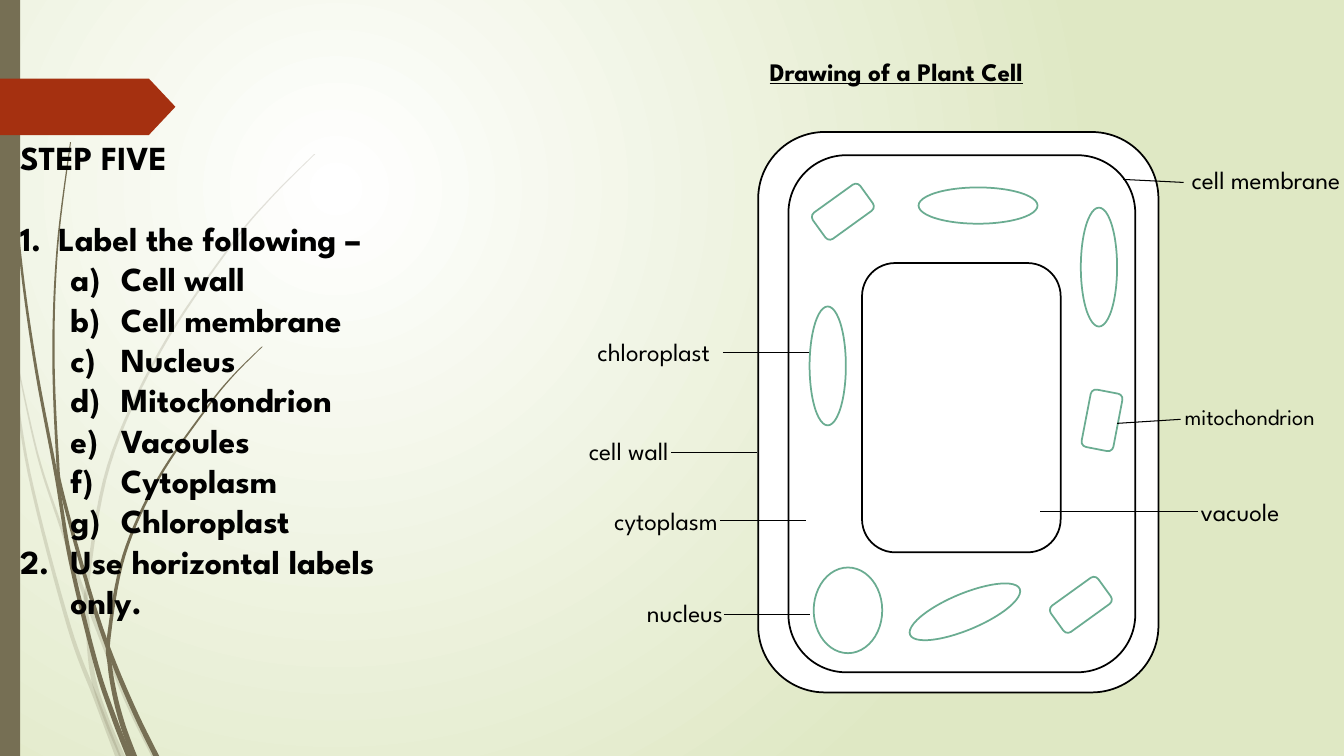
from lxml.etree import SubElement
from pptx import Presentation
from pptx.dml.color import RGBColor
from pptx.enum.shapes import MSO_CONNECTOR, MSO_SHAPE as Shape
from pptx.enum.text import MSO_ANCHOR, MSO_AUTO_SIZE, PP_ALIGN as Align
from pptx.oxml.ns import qn
from pptx.util import Inches, Pt

BOX, OVAL = Shape.FLOWCHART_ALTERNATE_PROCESS, Shape.OVAL
OLIVE, RUST, GREEN, BLACK, WHITE = "766F54", "A53010", "6AAC91", "000000", "FFFFFF"


def rgb(color):
    return RGBColor.from_string(color)


def grid(n):
    """Length of n grid cells: columns and rows are a tenth of an inch."""
    return Inches(n / 10)


def add_text(p, text, size=18, bold=False, underline=False, align=Align.LEFT):
    r = p.add_run()
    r.text = text
    p.alignment = align
    f = r.font
    f.name, f.size, f.bold, f.underline = "League Spartan", Pt(size), bold, underline
    f.color.rgb = rgb(BLACK)


def smooth(knots, steps=8):
    """Points of a Catmull-Rom curve through the knots."""
    ends = [knots[0], *knots, knots[-1]]
    points = []
    for a, b, c, d in zip(ends, ends[1:], ends[2:], ends[3:]):
        for i in range(steps):
            t = i / steps
            points.append(tuple(
                (2 * q + (r - p) * t + (2 * p - 5 * q + 4 * r - s) * t ** 2
                 + (3 * q - p - 3 * r + s) * t ** 3) / 2
                for p, q, r, s in zip(a, b, c, d)))
    return points + [knots[-1]]


class Sheet:
    def __init__(self, s):
        self.s = s

    def background(self, inner, outer):
        fill = self.s.background.fill
        fill.gradient()
        for stop, color in zip(fill.gradient_stops, (inner, outer)):
            stop.color.rgb = rgb(color)
        grad = self.s._element.find(".//" + qn("a:gradFill"))
        grad.remove(grad.find(qn("a:lin")))
        circle = SubElement(grad, qn("a:path"), {"path": "circle"})
        SubElement(circle, qn("a:fillToRect"),
                   {"l": "50000", "t": "50000", "r": "100000", "b": "100000"})

    def paint(self, sp, fill, line=None):
        sp.shadow.inherit = False
        sp.fill.solid()
        sp.fill.fore_color.rgb = rgb(fill)
        if line:
            sp.line.color.rgb = rgb(line)
            sp.line.width = Pt(1.25)
        else:
            sp.line.fill.background()
        return sp

    def shape(self, kind, x, y, w, h, fill=WHITE, line=None, turn=0):
        sp = self.s.shapes.add_shape(kind, grid(x), grid(y), grid(w), grid(h))
        sp.rotation = turn
        return self.paint(sp, fill, line)

    def blade(self, knots, width, opacity=100):
        """Grass blade that widens from its tip to its foot."""
        mid = smooth(knots)
        half = [0.05 + (width / 2 - 0.05) * i / len(mid) for i in range(len(mid))]
        left = [(grid(x - d), grid(y)) for (x, y), d in zip(mid, half)]
        right = [(grid(x + d), grid(y)) for (x, y), d in zip(mid, half)]
        fb = self.s.shapes.build_freeform(*left[0])
        fb.add_line_segments(left[1:] + right[::-1])
        sp = self.paint(fb.convert_to_shape(), OLIVE)
        if opacity < 100:
            color = sp._element.spPr.find(qn("a:solidFill"))[0]
            SubElement(color, qn("a:alpha"), {"val": str(opacity * 1000)})

    def frame(self, x, y, w, h, sp=None):
        sp = sp or self.s.shapes.add_textbox(0, 0, 0, 0)
        sp.left, sp.top, sp.width, sp.height = map(grid, (x, y, w, h))
        tf = sp.text_frame
        tf.word_wrap, tf.auto_size = True, MSO_AUTO_SIZE.NONE
        tf.vertical_anchor = MSO_ANCHOR.TOP
        return tf

    def label(self, text, x, y, w, **style):
        add_text(self.frame(x, y, w, 4).paragraphs[0], text, **style)

    def leader(self, x1, y1, x2, y2, target=None, site=2):
        cx = self.s.shapes.add_connector(MSO_CONNECTOR.STRAIGHT, 0, 0, 0, 0)
        if target is not None:
            cx.end_connect(target, site)
        cx.begin_x, cx.begin_y, cx.end_x, cx.end_y = map(grid, (x1, y1, x2, y2))
        cx.line.color.rgb = rgb(BLACK)
        cx.line.width = Pt(0.75)
        SubElement(cx._element.spPr, qn("a:effectLst"))

    def numbered(self, tf, text, scheme, left, hang, level=0):
        p = tf.add_paragraph()
        p.level = level
        add_text(p, text, size=24, bold=True)
        pPr = p._p.get_or_add_pPr()
        pPr.set("marL", str(grid(left)))
        pPr.set("indent", str(-grid(hang)))
        SubElement(pPr, qn("a:buFont"), {"typeface": "+mj-lt"})
        SubElement(pPr, qn("a:buAutoNum"), {"type": scheme})
        return p


def main():
    prs = Presentation()
    prs.slide_width, prs.slide_height = Inches(13.33), Inches(7.5)
    s = prs.slides.add_slide(prs.slide_layouts[5])
    sheet = Sheet(s)
    sheet.background(WHITE, "DFE8C4")

    # Grass blades, pale ones behind
    pale = [
        [(0, 29), (1, 34.7), (2.9, 47), (6.8, 62), (9.6, 69.5), (11.7, 75)],
        [(1.5, 35), (3.7, 45), (6, 52.1), (8.6, 59.6), (12.5, 69.3), (15.3, 75)],
        [(31.2, 15.3), (26.8, 19.7), (22.8, 24.5), (15.9, 34.8), (10.8, 46.1),
         (8.6, 58.4), (8.7, 62), (9.2, 67), (10.5, 71.2), (12.1, 75)],
    ]
    dark = [
        [(0.35, 0), (0.6, 6.8), (1.8, 23.3), (3.4, 35.5), (5.6, 47.3), (7, 55.6),
         (9.5, 65.8), (11.3, 71.2), (12.8, 75)],
        [(7, 14.1), (5.7, 24.5), (5.3, 34.9), (5.7, 45.3), (6.2, 49), (9, 59.1),
         (11, 65), (13.4, 70.7), (15.5, 75)],
        [(26, 34.4), (23.1, 37.3), (20.5, 40.5), (15.7, 47.5), (12.3, 55.1),
         (10.8, 63.2), (10.9, 66), (11.4, 69), (12.2, 72), (13.3, 75)],
    ]
    for knots in pale:
        sheet.blade(knots, 0.6, opacity=20)
    for knots in dark:
        sheet.blade(knots, 0.6)

    # Side bar and tag
    sheet.shape(Shape.RECTANGLE, 0, 0, 2, 75, fill=OLIVE)
    tag = sheet.shape(Shape.PENTAGON, 0, 7.8, 17.4, 5.6, fill=RUST)
    tag.adjustments[0] = 0.47

    # Title
    tf = sheet.frame(64.9, 5.1, 48, 4, s.shapes.title)
    add_text(tf.paragraphs[0], "Drawing of a Plant Cell", bold=True,
             underline=True, align=Align.CENTER)

    # Cell wall, membrane and vacuole
    for place in [(75.2, 13.1, 39.7, 55.6), (78.2, 15.4, 34.4, 51.3),
                  (85.5, 26.1, 19.7, 28.7)]:
        sheet.shape(BOX, *place, line=BLACK)

    # Organelles
    for x, y, turn in [(80.3, 30.4, 0), (107.2, 20.6, 0), (95.2, 14.5, 90),
                       (93.9, 54.8, 67.3)]:
        sheet.shape(OVAL, x, y, 3.6, 11.8, line=GREEN, turn=turn)
    sheet.shape(OVAL, 80.7, 56.3, 6.8, 8.5, line=GREEN)
    for x, y, turn in [(80.7, 19.4, 324.2), (104.3, 58.4, 324.2),
                       (106.4, 40.1, 280.9)]:
        mitochondrion = sheet.shape(BOX, x, y, 5.8, 3.2, line=GREEN, turn=turn)

    # Instructions
    tf = sheet.frame(1, 13.1, 39.8, 57.6)
    add_text(tf.paragraphs[0], "STEP FIVE", size=24, bold=True)
    p = sheet.numbered(tf, "Label the following –", "arabicPeriod", 3.8, 3.8)
    p.space_before = Pt(29)
    for part in ["Cell wall", "Cell membrane", "Nucleus", "Mitochondrion",
                 "Vacoules", "Cytoplasm", "Chloroplast"]:
        sheet.numbered(tf, part, "alphaLcParenR", 10, 5, level=1)
    sheet.numbered(tf, "Use horizontal labels only.", "arabicPeriod", 5, 5)

    # Labels and their leader lines
    for text, x, y, line_x, line_y in [
            ("chloroplast", 55.8, 32.9, 71.7, 35), ("cell wall", 51.7, 42.7, 66.6, 44.9),
            ("cytoplasm", 56.6, 49.6, 71.4, 51.6), ("nucleus", 57.1, 58.8, 71.8, 61)]:
        sheet.label(text, x, y, 15.6, align=Align.RIGHT)
        sheet.leader(line_x, line_y, line_x + 8.5, line_y)
    sheet.label("cell membrane", 117.2, 15.8, 18.3)
    sheet.leader(117.4, 18.1, 111.4, 17.8)
    sheet.label("mitochondrion", 116.5, 39.5, 18.3, size=16)
    sheet.leader(117.1, 41.6, 110.8, 42, mitochondrion)
    sheet.label("vacuole", 118.1, 48.7, 15.6)
    sheet.leader(118.8, 50.7, 103.2, 50.7)

    prs.save("out.pptx")


if __name__ == "__main__":
    main()
